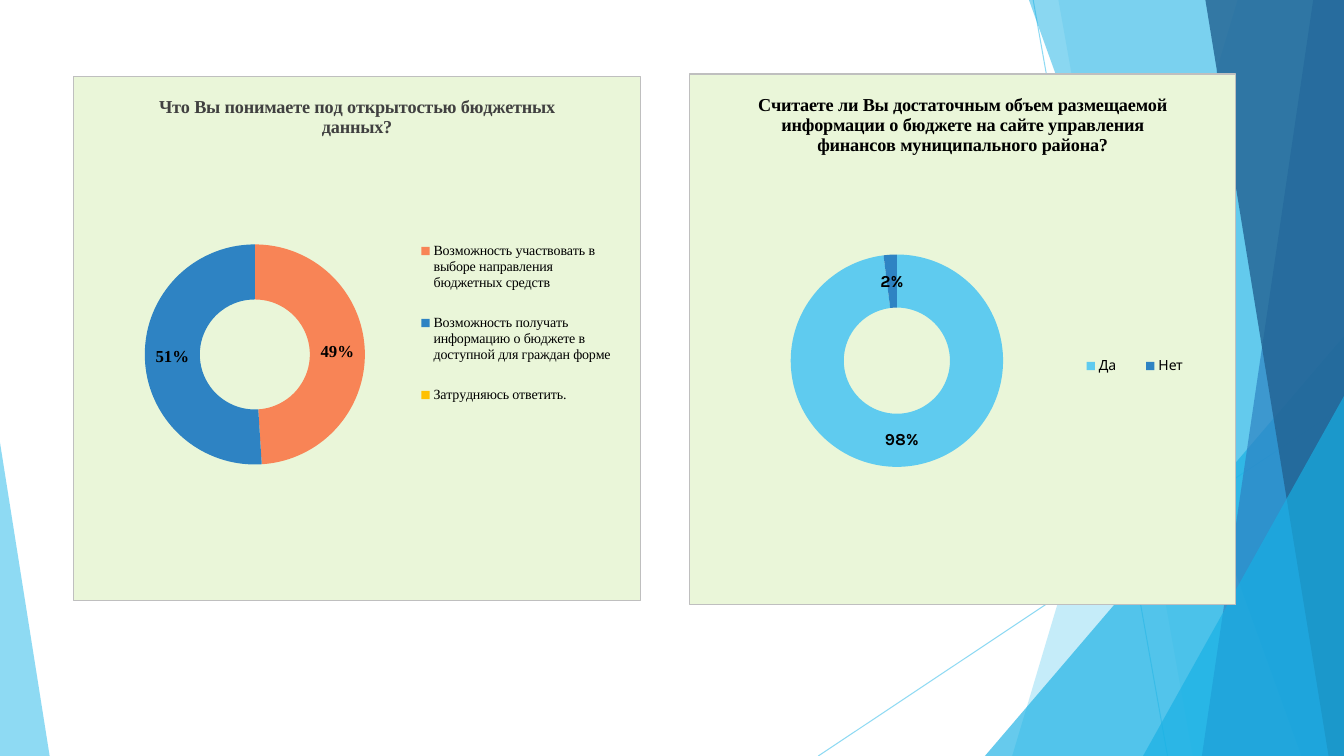
import pptx
import pptx.chart.data
import pptx.dml.color
import pptx.enum.chart
import pptx.enum.shapes
import pptx.oxml
import pptx.oxml.ns
import pptx.util

Pt = pptx.util.Pt
qn = pptx.oxml.ns.qn
WIDTH, HEIGHT = 960, 540
NAMESPACES = ('xmlns:c="http://schemas.openxmlformats.org/drawingml/2006/chart" '
              'xmlns:a="http://schemas.openxmlformats.org/drawingml/2006/main"')


def color(value):
    return pptx.dml.color.RGBColor.from_string(value)


def set_font(font, fill, **formats):
    font.color.rgb = color(fill)
    for name, value in formats.items():
        setattr(font, name, value)


def set_opacity(shape, percent):
    for node in shape.element.spPr.iter(qn("a:srgbClr")):
        alpha = pptx.oxml.parse_xml(f'<a:alpha {NAMESPACES} val="{percent * 1000}"/>')
        node.append(alpha)


def paint(shape, fill, opacity):
    shape.shadow.inherit = False
    shape.fill.solid()
    shape.fill.fore_color.rgb = color(fill)
    shape.line.fill.background()
    set_opacity(shape, opacity)


def add_thin_line(slide, start, end):
    line = slide.shapes.add_connector(
        pptx.enum.shapes.MSO_CONNECTOR.STRAIGHT, *map(Pt, start + end))
    line.line.color.rgb = color("5FCBEF")
    line.line.width = Pt(0.75)
    set_opacity(line, 70)
    line.element.spPr.append(pptx.oxml.parse_xml(f"<a:effectLst {NAMESPACES}/>"))


def add_right_band(slide, top_left, bottom_left, fill, opacity):
    """Fill from a slanted left side to the right edge of the slide."""
    builder = slide.shapes.build_freeform(Pt(top_left), Pt(0))
    builder.add_line_segments([(Pt(x), Pt(y)) for x, y in (
        (WIDTH, 0), (WIDTH, HEIGHT), (bottom_left, HEIGHT))])
    paint(builder.convert_to_shape(), fill, opacity)


def add_corner_triangle(slide, left, top, width, apex, fill, opacity):
    """Triangle standing on the bottom edge; apex runs from 0 (left) to 1 (right)."""
    shape = slide.shapes.add_shape(
        pptx.enum.shapes.MSO_SHAPE.ISOSCELES_TRIANGLE,
        Pt(left), Pt(top), Pt(width), Pt(HEIGHT - top))
    shape.adjustments[0] = apex
    paint(shape, fill, opacity)


def make_layout(box, target=""):
    """Manual chart layout; box holds x, y, width and height as fractions."""
    modes = "".join(f'<c:{name}Mode val="edge"/>' for name in "xy")
    sizes = "".join(f'<c:{name} val="{value}"/>' for name, value in zip("xywh", box))
    return pptx.oxml.parse_xml(
        f"<c:layout {NAMESPACES}><c:manualLayout>{target}{modes}{sizes}"
        "</c:manualLayout></c:layout>")


def replace_layout(parent, layout, index):
    for old in parent.findall(qn("c:layout")):
        parent.remove(old)
    parent.insert(index, layout)


def add_panel_fill(chart):
    panel = pptx.oxml.parse_xml(
        f'<c:spPr {NAMESPACES}><a:solidFill><a:srgbClr val="EAF6D9"/></a:solidFill>'
        '<a:ln w="9525"><a:solidFill><a:srgbClr val="BFBFBF"/></a:solidFill></a:ln></c:spPr>')
    chart.element.find(qn("c:chart")).addnext(panel)


def add_doughnut(slide, box, title, title_color, answers, font_name, plot_box, legend_box):
    """answers holds (category, value, colour) rows."""
    data = pptx.chart.data.CategoryChartData()
    data.categories = [category for category, _, _ in answers]
    data.add_series("Series 1", [value for _, value, _ in answers])
    chart = slide.shapes.add_chart(
        pptx.enum.chart.XL_CHART_TYPE.DOUGHNUT, *map(Pt, box), data).chart
    set_font(chart.font, "000000", name=font_name, size=Pt(10))
    add_panel_fill(chart)

    chart.has_title = True
    chart.chart_title.include_in_layout = False
    paragraph = chart.chart_title.text_frame.paragraphs[0]
    run = paragraph.add_run()
    run.text = title
    set_font(run.font, title_color, name="Times New Roman", size=Pt(13), bold=True)

    chart.has_legend = True
    chart.legend.position = pptx.enum.chart.XL_LEGEND_POSITION.RIGHT
    chart.legend.include_in_layout = False
    set_font(chart.legend.font, "000000", name=font_name, size=Pt(10))
    replace_layout(chart.legend._element, make_layout(legend_box), 1)
    plot_area = chart.element.find(qn("c:chart")).find(qn("c:plotArea"))
    target = '<c:layoutTarget val="inner"/>'
    replace_layout(plot_area, make_layout(plot_box, target), 0)

    plot = chart.plots[0]
    plot.vary_by_categories = True
    for index, (_, _, fill) in enumerate(answers):
        point_format = plot.series[0].points[index].format
        point_format.fill.solid()
        point_format.fill.fore_color.rgb = color(fill)
        point_format.line.fill.background()
    labels = plot.series[0].data_labels
    formats = {"show_percentage": True, "show_value": False, "show_legend_key": False,
               "number_format": "0%;;", "number_format_is_linked": False}
    for name, value in formats.items():
        setattr(labels, name, value)
    set_font(labels.font, "000000", name=font_name, size=Pt(12), bold=True)


def add_background(slide):
    add_thin_line(slide, (738, 0), (834, HEIGHT))
    add_thin_line(slide, (WIDTH, 290), (584.5, HEIGHT))
    add_right_band(slide, 884, 723, "5FCBEF", 36)
    add_right_band(slide, 756, 852, "5FCBEF", 20)
    add_corner_triangle(slide, 703.5, 240, 256.5, 1, "17B0E4", 66)
    add_right_band(slide, 735, 929.5, "17B0E4", 50)
    add_right_band(slide, 938, 858.5, "2E83C3", 70)
    add_right_band(slide, 861, 949, "226292", 80)
    add_corner_triangle(slide, 816.5, 283, 143.5, 1, "17B0E4", 66)
    add_corner_triangle(slide, 0, 316, 35.5, 0, "5FCBEF", 70)


def main():
    presentation = pptx.Presentation()
    presentation.slide_width, presentation.slide_height = Pt(WIDTH), Pt(HEIGHT)
    slide = presentation.slides.add_slide(presentation.slide_layouts[6])
    add_background(slide)
    add_doughnut(
        slide, (52, 54.5, 406, 375),
        "Что Вы понимаете под открытостью бюджетных данных?", "404040",
        [("Возможность участвовать в выборе направления бюджетных средств", 49, "F88456"),
         ("Возможность получать информацию о бюджете в доступной для граждан форме",
          51, "2E83C3"),
         ("Затрудняюсь ответить.", 0, "FFC000")],
        "Times New Roman", (0.08, 0.32, 0.48, 0.42), (0.61, 0.27, 0.34, 0.4))
    add_doughnut(
        slide, (492, 52.5, 391, 380),
        "Считаете ли Вы достаточным объем размещаемой информации о бюджете "
        "на сайте управления финансов муниципального района?", "000000",
        [("Да", 98, "5FCBEF"), ("Нет", 2, "2E83C3")],
        "Karla", (0.15, 0.34, 0.46, 0.4), (0.68, 0.52, 0.27, 0.06))
    presentation.save("out.pptx")


if __name__ == "__main__":
    main()
